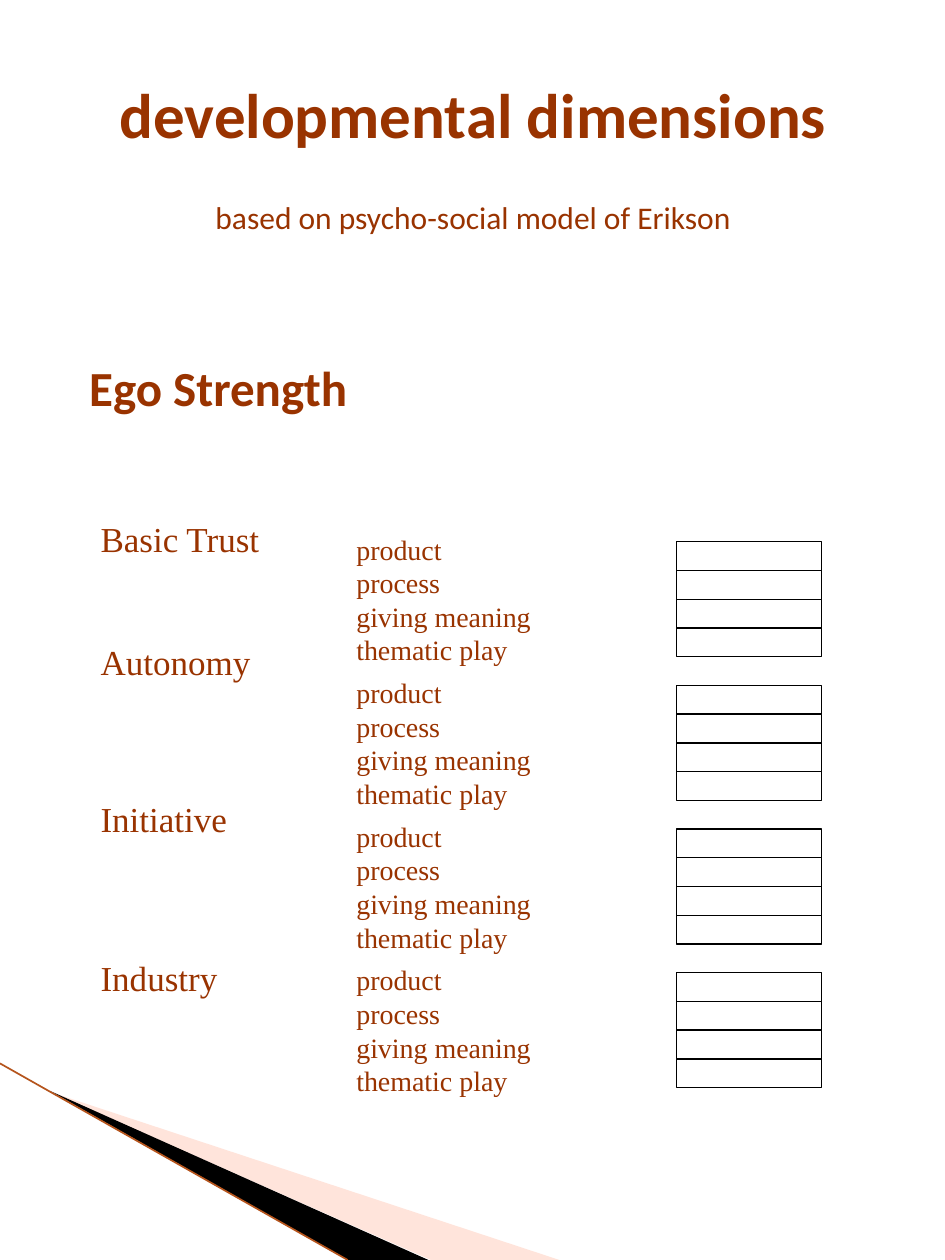
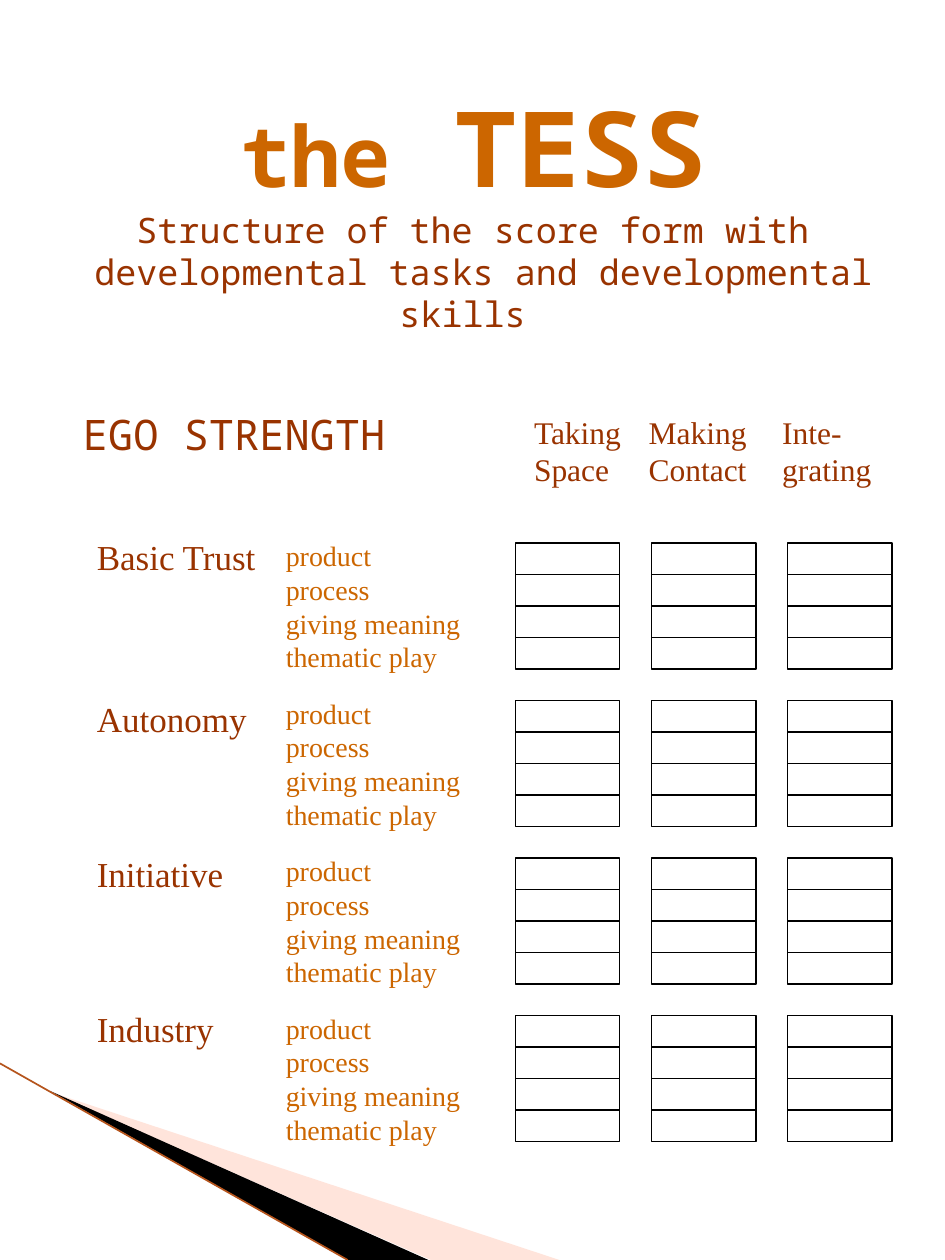
import pptx
import pptx.dml.color
import pptx.enum.shapes
import pptx.enum.text
import pptx.oxml.ns
import pptx.util
from lxml import etree

Inches = pptx.util.Inches
Pt = pptx.util.Pt
Shape = pptx.enum.shapes.MSO_SHAPE
Align = pptx.enum.text.PP_ALIGN
Anchor = pptx.enum.text.MSO_ANCHOR
qn = pptx.oxml.ns.qn

RUST, AMBER, PEACH, LINE = "993300", "CC6600", "FFBCA5", "B5541C"
BLACK, WHITE = "000000", "FFFFFF"
SANS, MONO, SERIF = "Calibri", "Noto Sans Mono", "Times New Roman"

STAGES = ["Basic Trust", "Autonomy", "Initiative", "Industry"]
SKILLS = ["product", "process", "giving meaning", "thematic play"]
TASKS = [(4.14, ["Taking", "Space"]), (5.05, ["Making", "Contact"]),
         (6.11, ["Inte-", "grating"])]


def color(code):
    return pptx.dml.color.RGBColor.from_string(code)


def style(font, face, size, tint=RUST, bold=False):
    font.name, font.size, font.bold = face, Pt(size), bold
    font.color.rgb = color(tint)


def frame(slide, box, anchor=Anchor.MIDDLE):
    text = slide.shapes.add_textbox(*map(Inches, box)).text_frame
    text.word_wrap = True
    text.vertical_anchor = anchor
    return text


def write(slide, box, lines, face, size, tint=RUST, bold=False,
          anchor=Anchor.MIDDLE):
    """Add a text box with one paragraph per line, all in one style."""
    text = frame(slide, box, anchor)
    text.text = "\n".join(lines)
    for para in text.paragraphs:
        style(para.font, face, size, tint, bold)


def wedge(slide, points, fill, alpha=None):
    spots = [(Inches(x), Inches(y)) for x, y in points]
    pen = slide.shapes.build_freeform(*spots[0])
    pen.add_line_segments(spots[1:])
    shape = pen.convert_to_shape()
    shape.shadow.inherit = False
    shape.fill.solid()
    shape.fill.fore_color.rgb = color(fill)
    shape.line.fill.background()
    if alpha:
        tone = shape.fill._xPr.find(".//" + qn("a:srgbClr"))
        etree.SubElement(tone, qn("a:alpha")).set("val", str(alpha * 1000))


def corner(slide):
    """Draw the wedges and line in the lower left corner."""
    wedge(slide, [(0.41, 8.67), (4.44, 10), (3.42, 10)], PEACH, 40)
    wedge(slide, [(0.4, 8.66), (3.4, 10), (2.76, 10)], BLACK)
    edge = slide.shapes.add_connector(
        pptx.enum.shapes.MSO_CONNECTOR.STRAIGHT,
        Inches(0), Inches(8.44), Inches(2.76), Inches(10))
    edge.line.color.rgb = color(LINE)
    edge.line.width = Pt(0.95)
    etree.SubElement(edge._element.spPr, qn("a:effectLst"))


def stages(slide, left, tops):
    for name, top in zip(STAGES, tops):
        write(slide, (left, top, 1.6, 0.44), [name], SERIF, 20)


def cell(slide, box):
    shape = slide.shapes.add_shape(Shape.RECTANGLE, *map(Inches, box))
    shape.shadow.inherit = False
    shape.fill.solid()
    shape.fill.fore_color.rgb = color(WHITE)
    shape.line.color.rgb = color(BLACK)
    shape.line.width = Pt(0.75)


def scores(slide, left, top, pitch, cols, width, tint):
    """Set the skill names and score cells, one block per stage."""
    row = pitch / 5
    for block in range(len(STAGES)):
        head = top + block * pitch
        mid = head + 2 * row
        write(slide, (left, mid - 0.59, 1.8, 1.18), SKILLS, SERIF, 16, tint)
        for col in cols:
            for step in range(len(SKILLS)):
                cell(slide, (col, head + step * row, width, row))


def model(slide):
    corner(slide)
    text = frame(slide, (0.38, 0.4, 6.75, 1.67))
    text.text = "developmental dimensions\nbased on psycho-social model of Erikson"
    head, sub = text.paragraphs
    style(head.font, SANS, 36, bold=True)
    style(sub.font, SANS, 18)
    sub.space_before = Pt(27)
    head.alignment = sub.alignment = Align.CENTER
    stages(slide, 0.7, [4.05, 5.03, 6.28, 7.54])
    scores(slide, 2.73, 4.3, 1.14, [5.37], 1.15, RUST)
    write(slide, (0.61, 2.79, 4.24, 0.57), ["Ego Strength"], SANS, 28,
          bold=True, anchor=Anchor.TOP)


def form(slide):
    corner(slide)
    text = frame(slide, (0.38, 0.4, 6.75, 2.51))
    head = text.paragraphs[0]
    for part, size in (("the", 48), (" TESS", 60)):
        run = head.add_run()
        run.text = part
        style(run.font, MONO, size, AMBER, True)
    sub = text.add_paragraph()
    sub.text = ("Structure of the score form with\v"
                " developmental tasks and developmental skills ")
    style(sub.font, MONO, 20)
    head.alignment = sub.alignment = Align.CENTER
    write(slide, (0.56, 3.19, 3.2, 0.71), ["EGO STRENGTH"], MONO, 24,
          anchor=Anchor.TOP)
    stages(slide, 0.67, [4.2, 5.48, 6.71, 7.94])
    scores(slide, 2.17, 4.31, 1.25, [4.09, 5.17, 6.25], 0.83, AMBER)
    for left, lines in TASKS:
        write(slide, (left, 3.22, 1.1, 0.71), lines, SERIF, 18)


def main():
    deck = pptx.Presentation()
    deck.slide_width, deck.slide_height = Inches(7.5), Inches(10)
    for build in (model, form):
        build(deck.slides.add_slide(deck.slide_layouts[6]))
    deck.save("out.pptx")


if __name__ == "__main__":
    main()
